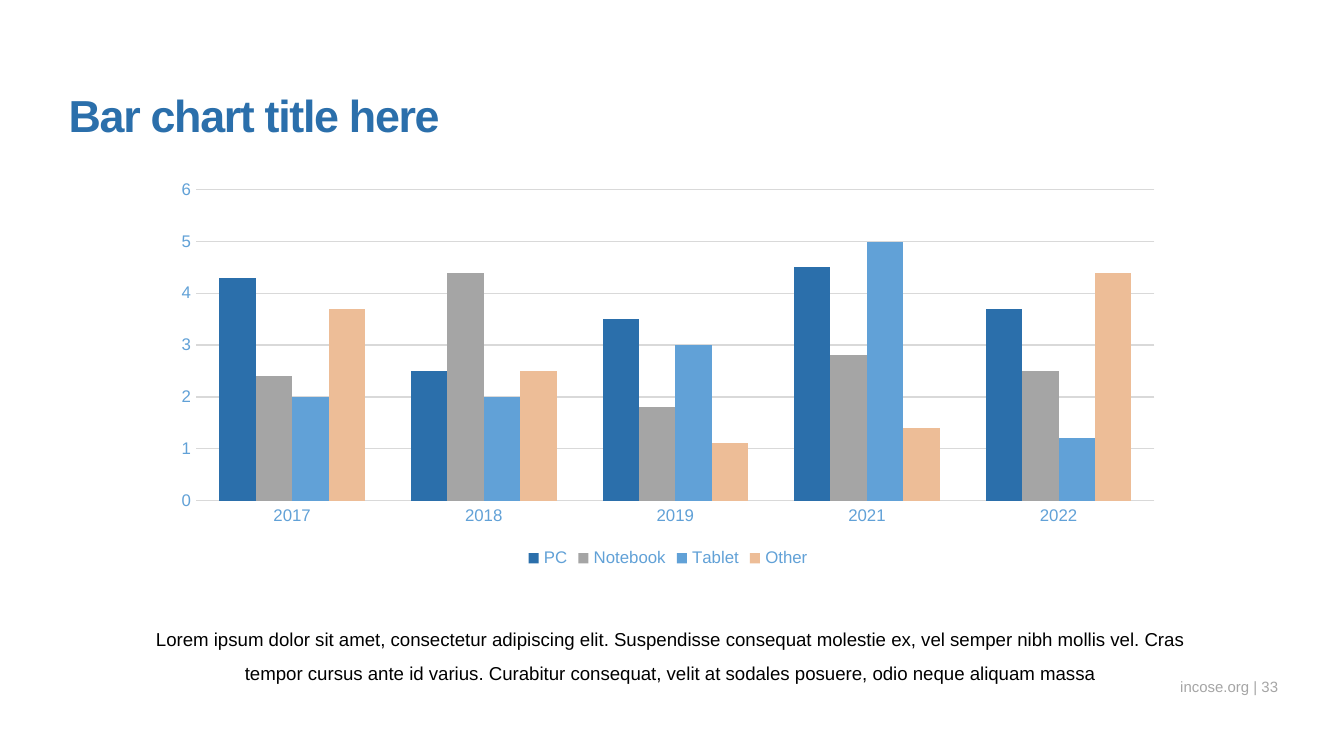
from dataclasses import dataclass

from pptx import Presentation
from pptx.chart.data import CategoryChartData
from pptx.dml.color import RGBColor
from pptx.enum.chart import XL_CHART_TYPE, XL_LEGEND_POSITION, XL_TICK_MARK
from pptx.enum.text import MSO_ANCHOR, PP_ALIGN
from pptx.util import Cm, Pt

COLUMNS = XL_CHART_TYPE.COLUMN_CLUSTERED
LEGEND_BOTTOM = XL_LEGEND_POSITION.BOTTOM
NO_TICK = XL_TICK_MARK.NONE
TOP, BOTTOM = MSO_ANCHOR.TOP, MSO_ANCHOR.BOTTOM
LEFT, CENTER, RIGHT = PP_ALIGN.LEFT, PP_ALIGN.CENTER, PP_ALIGN.RIGHT

# Content
TITLE = "Bar chart title here"
CAPTION = (
    "Lorem ipsum dolor sit amet, consectetur adipiscing elit. "
    "Suspendisse consequat molestie ex, vel semper nibh mollis vel. "
    "Cras tempor cursus ante id varius. Curabitur consequat, velit at "
    "sodales posuere, odio neque aliquam massa"
)
FOOTER = "incose.org | 33"
YEARS = ["2017", "2018", "2019", "2021", "2022"]
DEVICES = {
    "PC": (4.3, 2.5, 3.5, 4.5, 3.7),
    "Notebook": (2.4, 4.4, 1.8, 2.8, 2.5),
    "Tablet": (2, 2, 3, 5, 1.2),
    "Other": (3.7, 2.5, 1.1, 1.4, 4.4),
}


@dataclass(frozen=True)
class Theme:
    font: str = "Arial"
    blue: str = "2B6FAB"
    gray: str = "A5A5A5"
    sky: str = "61A1D7"
    peach: str = "EDBD97"
    black: str = "000000"
    grid: str = "D9D9D9"
    title_size: float = 24
    body_size: float = 10
    label_size: float = 9
    footer_size: float = 8
    line_width: float = 0.75


THEME = Theme()


def style_font(font, size, color, bold=False):
    font.name, font.size, font.bold = THEME.font, Pt(size), bold
    font.color.rgb = RGBColor.from_string(color)


def style_line(line):
    line.color.rgb = RGBColor.from_string(THEME.grid)
    line.width = Pt(THEME.line_width)


def add_text(slide, text, box, *, size, color, bold=False, align=LEFT, anchor=TOP,
             line_spacing=1.0, space_after=0, tracking=0, insets=(0, 0, 0, 0)):
    frame = slide.shapes.add_textbox(*map(Cm, box)).text_frame
    frame.word_wrap = True
    frame.vertical_anchor = anchor
    (frame.margin_left, frame.margin_top,
     frame.margin_right, frame.margin_bottom) = map(Cm, insets)
    paragraph = frame.paragraphs[0]
    paragraph.alignment = align
    paragraph.line_spacing = line_spacing
    paragraph.space_after = Pt(space_after)
    run = paragraph.add_run()
    run.text = text
    style_font(run.font, size, color, bold)
    if tracking:
        run.font._element.set("spc", str(round(tracking * 100)))


def add_device_chart(slide, box):
    data = CategoryChartData()
    data.categories = YEARS
    for device, values in DEVICES.items():
        data.add_series(device, values)
    chart = slide.shapes.add_chart(COLUMNS, *map(Cm, box), data).chart
    chart.has_title = False
    style_font(chart.font, THEME.body_size, THEME.black)

    # Bars
    plot = chart.plots[0]
    plot.gap_width, plot.overlap, plot.vary_by_categories = 126, 0, False
    colors = (THEME.blue, THEME.gray, THEME.sky, THEME.peach)
    for series, color in zip(plot.series, colors):
        series.format.fill.solid()
        series.format.fill.fore_color.rgb = RGBColor.from_string(color)
        series.invert_if_negative = False

    # Axes
    years, amounts = chart.category_axis, chart.value_axis
    for axis in (years, amounts):
        axis.major_tick_mark = axis.minor_tick_mark = NO_TICK
        style_font(axis.tick_labels.font, THEME.label_size, THEME.sky)
    style_line(years.format.line)
    amounts.format.line.fill.background()
    amounts.minimum_scale, amounts.maximum_scale, amounts.major_unit = 0, 6, 1
    amounts.has_major_gridlines = True
    style_line(amounts.major_gridlines.format.line)

    # Legend
    chart.has_legend = True
    chart.legend.position = LEGEND_BOTTOM
    chart.legend.include_in_layout = False
    style_font(chart.legend.font, THEME.label_size, THEME.sky)


def main():
    deck = Presentation()
    deck.slide_width, deck.slide_height = Cm(25.4), Cm(14.29)
    slide = deck.slides.add_slide(deck.slide_layouts[6])

    # Page footer
    add_text(slide, FOOTER, (21.29, 12.67, 2.87, 0.48), size=THEME.footer_size,
             color=THEME.gray, align=RIGHT, anchor=BOTTOM, line_spacing=1.5)
    # Title
    add_text(slide, TITLE, (1.3, 1.65, 22.83, 1.02), size=THEME.title_size,
             color=THEME.blue, bold=True, tracking=-0.7)
    # Caption under the chart
    add_text(slide, CAPTION, (2.77, 11.53, 20.02, 1.45), size=THEME.body_size,
             color=THEME.black, align=CENTER, line_spacing=1.5, space_after=3,
             insets=(0, 0.13, 0.25, 0.13))
    # Chart
    add_device_chart(slide, (3.05, 3.25, 19.15, 7.59))

    deck.save("out.pptx")


if __name__ == "__main__":
    main()
